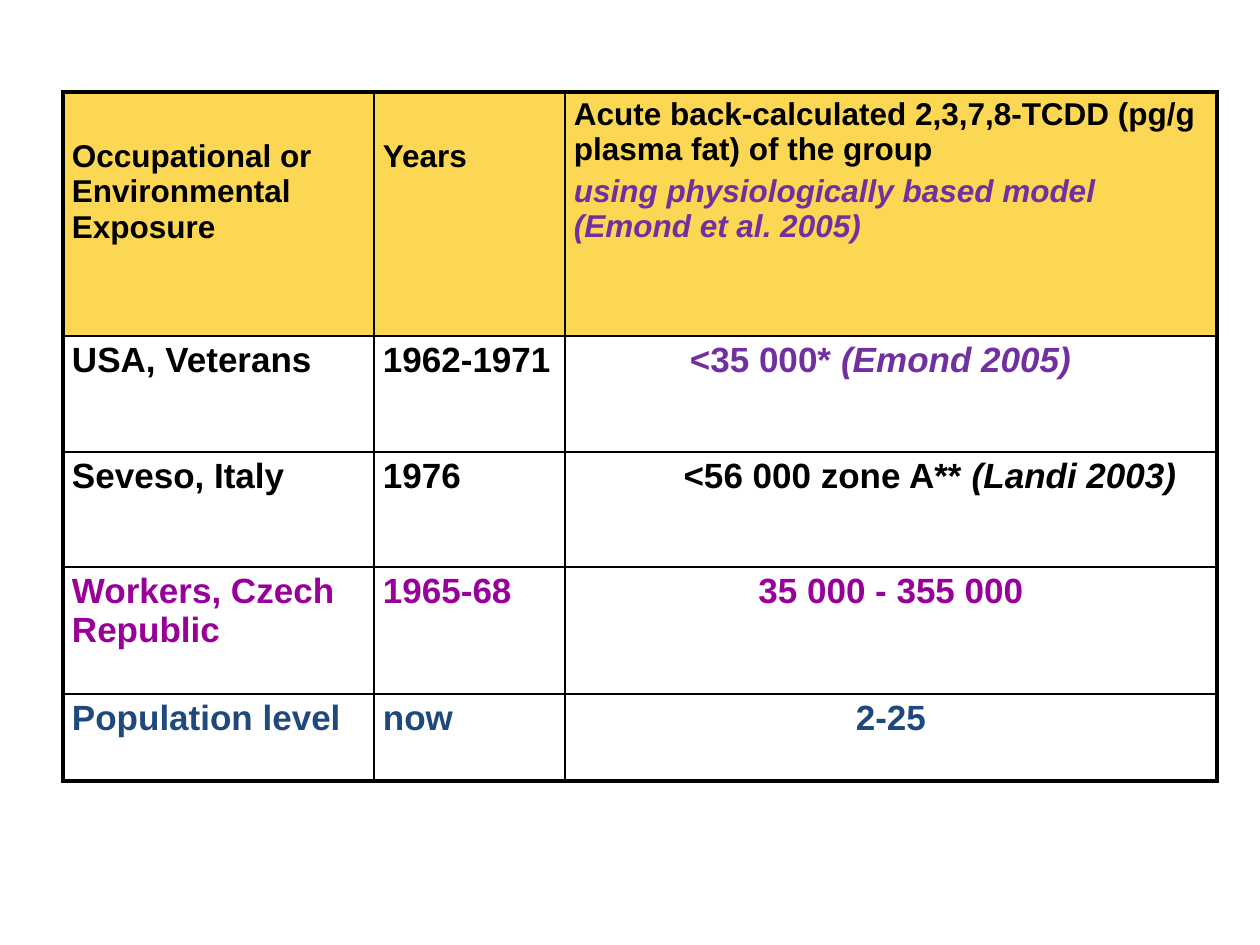
from dataclasses import dataclass

from lxml.etree import SubElement
from pptx import Presentation
from pptx.dml.color import RGBColor
from pptx.enum.text import PP_ALIGN
from pptx.oxml.ns import qn
from pptx.util import Emu, Pt

SCALE = 914400 / 126  # EMU in one px
HUES = {
    "black": "000000",
    "gold": "FBD753",
    "violet": "7030A0",
    "purple": "990099",
    "navy": "1F497D",
}
COLS = [311, 191, 652]
ROWS = [244, 116, 115, 127, 87]
LEFT, TOP = 63, 92
PAD_X, PAD_Y = 9, 5
DROP = 47  # top margin of the lowered header labels


@dataclass
class Part:
    text: str
    hue: str = "black"
    italic: bool = False


@dataclass
class Entry:
    paras: list[list[Part]]
    center: bool = False
    indent: int = 0
    top: int = PAD_Y


def px(n: int) -> Emu:
    return Emu(round(n * SCALE))


def plain(text: str, hue: str = "black", **kw) -> Entry:
    return Entry([[Part(text, hue)]], **kw)


def add_text(para, text: str, *, size: int, hue: str, italic: bool) -> None:
    run = para.add_run()
    run.text = text
    font = run.font
    font.name, font.size = "Arial", Pt(size)
    font.bold, font.italic = True, italic
    font.color.rgb = RGBColor.from_string(HUES[hue])


def add_edge(props, side: str, width: float) -> None:
    line = SubElement(props, qn(f"a:ln{side}"), w=str(Pt(width)))
    fill = SubElement(line, qn("a:solidFill"))
    SubElement(fill, qn("a:srgbClr"), val=HUES["black"])


def draw_cell(cell, entry: Entry, row: int, col: int) -> None:
    # Borders come before the fill; the outer frame is heavier
    outer = {
        "L": col == 0,
        "R": col == len(COLS) - 1,
        "T": row == 0,
        "B": row == len(ROWS) - 1,
    }
    props = cell._tc.get_or_add_tcPr()
    for side, heavy in outer.items():
        add_edge(props, side, 2.25 if heavy else 1)
    if row == 0:
        cell.fill.solid()
        cell.fill.fore_color.rgb = RGBColor.from_string(HUES["gold"])
    else:
        cell.fill.background()

    cell.margin_left = cell.margin_right = px(PAD_X)
    cell.margin_top, cell.margin_bottom = px(entry.top), px(PAD_Y)
    frame = cell.text_frame
    for i, parts in enumerate(entry.paras):
        para = frame.add_paragraph() if i else frame.paragraphs[0]
        para.alignment = PP_ALIGN.CENTER if entry.center else PP_ALIGN.LEFT
        if i:
            para.space_before = Pt(3.6)
        if entry.indent:
            para._p.get_or_add_pPr().set("marL", str(px(entry.indent)))
        for part in parts:
            add_text(para, part.text, size=20 if row else 18,
                     hue=part.hue, italic=part.italic)


GRID = [
    [
        plain("Occupational or Environmental Exposure", top=DROP),
        plain("Years", top=DROP),
        Entry([
            [Part("Acute back-calculated 2,3,7,8-TCDD (pg/g plasma fat) of the group")],
            [Part("using physiologically based model (Emond et al. 2005)", "violet", True)],
        ]),
    ],
    [
        plain("USA, Veterans"),
        plain("1962-1971"),
        Entry([[Part("<35 000* ", "violet"), Part("(Emond 2005)", "violet", True)]],
              indent=116),
    ],
    [
        plain("Seveso, Italy"),
        plain("1976"),
        Entry([[Part("<56 000 zone A** "), Part("(Landi 2003)", italic=True)]],
              center=True, indent=78),
    ],
    [
        plain("Workers, Czech Republic", "purple"),
        plain("1965-68", "purple"),
        plain("35 000 - 355 000", "purple", center=True),
    ],
    [
        plain("Population level", "navy"),
        plain("now", "navy"),
        plain("2-25", "navy", center=True),
    ],
]


def main() -> None:
    deck = Presentation()
    deck.slide_width, deck.slide_height = px(1260), px(945)
    slide = deck.slides.add_slide(deck.slide_layouts[6])

    # Exposure table
    table = slide.shapes.add_table(
        len(ROWS), len(COLS), px(LEFT), px(TOP), px(sum(COLS)), px(sum(ROWS))
    ).table
    table.first_row = table.horz_banding = False
    for col, width in zip(table.columns, COLS):
        col.width = px(width)
    for row, height in zip(table.rows, ROWS):
        row.height = px(height)
    for r, line in enumerate(GRID):
        for c, entry in enumerate(line):
            draw_cell(table.cell(r, c), entry, r, c)

    deck.save("out.pptx")


if __name__ == "__main__":
    main()
